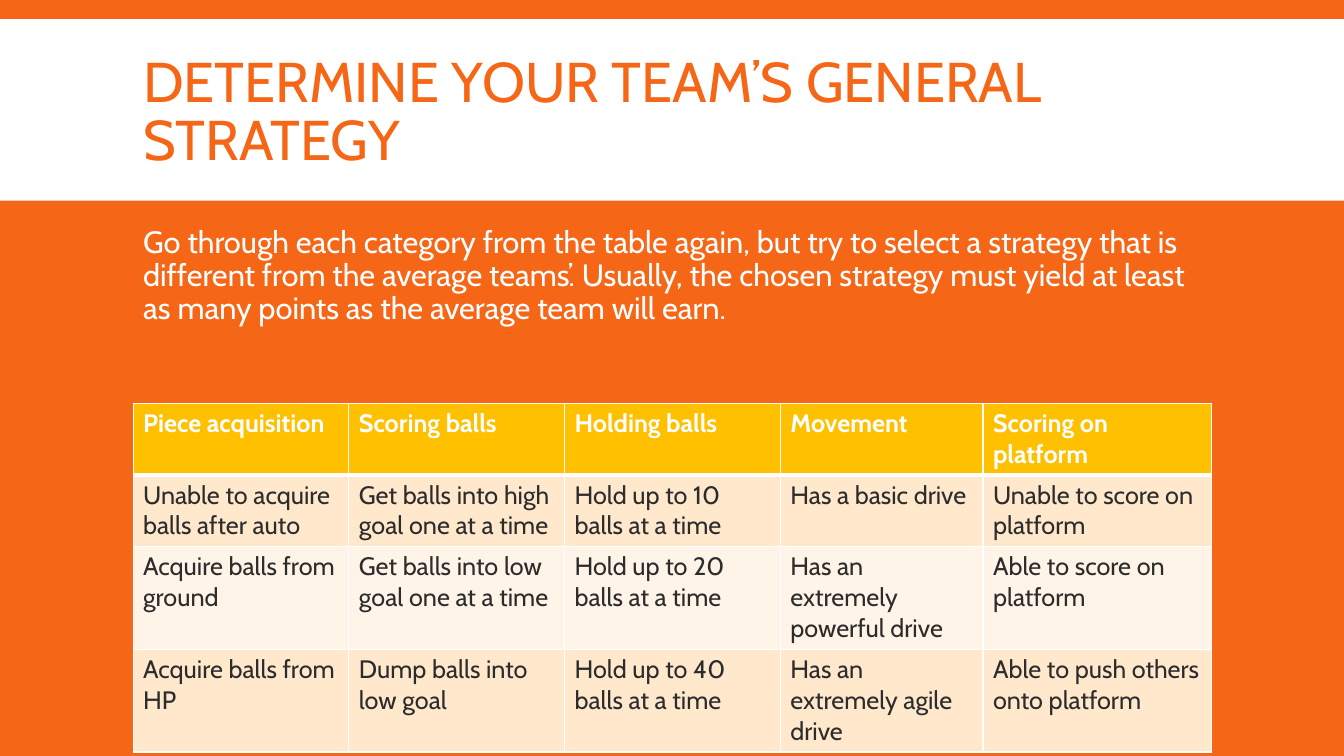
from pptx import Presentation
from pptx.dml.color import RGBColor
from pptx.enum.shapes import MSO_SHAPE
from pptx.enum.text import MSO_ANCHOR, MSO_AUTO_SIZE, PP_ALIGN
from pptx.util import Inches, Pt
from lxml.etree import SubElement
from pptx.oxml.ns import qn

# Content
TITLE = "DETERMINE YOUR TEAM’S GENERAL STRATEGY"
BODY = ("Go through each category from the table again, but try to select a "
        "strategy that is different from the average teams’. Usually, the chosen "
        "strategy must yield at least as many points as the average team will earn.")
ROWS = [
    ("Piece acquisition", "Scoring balls", "Holding balls", "Movement",
     "Scoring on platform"),
    ("Unable to acquire balls after auto", "Get balls into high goal one at a time",
     "Hold up to 10 balls at a time", "Has a basic drive",
     "Unable to score on platform"),
    ("Acquire balls from ground", "Get balls into low goal one at a time",
     "Hold up to 20 balls at a time", "Has an extremely powerful drive",
     "Able to score on platform"),
    ("Acquire balls from HP", "Dump balls into low goal",
     "Hold up to 40 balls at a time", "Has an extremely agile drive",
     "Able to push others onto platform"),
]
WIDTHS = [2.14, 2.14, 2.14, 2.01, 2.27]
HEIGHTS = [0.71, 0.71, 1.02, 1.02]

# Style
FONT = "Cabin"
ORANGE = RGBColor(0xF5, 0x66, 0x17)
WHITE = RGBColor(0xFF, 0xFF, 0xFF)
GOLD = RGBColor(0xFF, 0xC0, 0x00)
PEACH = RGBColor(0xFF, 0xE8, 0xCC)
CREAM = RGBColor(0xFF, 0xF4, 0xE7)
DARK = RGBColor(0x2C, 0x2C, 0x2C)
LEFT, WIDTH = 1.32, 10.7


def style(para, size, color, bold=False):
    for run in para.runs:
        font = run.font
        font.name, font.size, font.bold = FONT, Pt(size), bold
        font.color.rgb = color


def fill_box(box, text, top, height, size, color, anchor, spacing):
    box.left, box.top = Inches(LEFT), Inches(top)
    box.width, box.height = Inches(WIDTH), Inches(height)
    frame = box.text_frame
    frame.text = text
    frame.word_wrap = True
    frame.auto_size = MSO_AUTO_SIZE.NONE
    frame.vertical_anchor = anchor
    para = frame.paragraphs[0]
    para.alignment = PP_ALIGN.LEFT
    para.line_spacing = spacing
    style(para, size, color)
    return para


def add_border(cell, side, points):
    line = SubElement(cell._tc.get_or_add_tcPr(), qn("a:" + side), w=str(Pt(points)))
    solid = SubElement(line, qn("a:solidFill"))
    SubElement(solid, qn("a:srgbClr"), val=str(WHITE))


prs = Presentation()
prs.slide_width, prs.slide_height = Inches(13.33), Inches(7.5)
slide = prs.slides.add_slide(prs.slide_layouts[1])
slide.background.fill.solid()
slide.background.fill.fore_color.rgb = ORANGE
shapes = slide.shapes

# White band behind the title
band = shapes.add_shape(MSO_SHAPE.RECTANGLE, 0, Inches(0.19),
                        prs.slide_width, Inches(1.8))
band.shadow.inherit = False
band.fill.solid()
band.fill.fore_color.rgb = WHITE
band.line.fill.background()
shapes._spTree.insert(2, band._element)

# Title and body
fill_box(shapes.title, TITLE, 0.31, 1.65, 40, ORANGE, MSO_ANCHOR.MIDDLE, 0.85)
para = fill_box(slide.placeholders[1], BODY, 2.2, 4.6, 22, WHITE,
                MSO_ANCHOR.TOP, 0.9)
para.space_before, para.space_after = Pt(12), Pt(2)
props = para._p.get_or_add_pPr()
props.set("marL", "0")
props.set("indent", "0")
SubElement(props, qn("a:buNone"))

# Strategy table
table = shapes.add_table(len(ROWS), len(WIDTHS), Inches(LEFT), Inches(4),
                         Inches(WIDTH), Inches(sum(HEIGHTS))).table
for col, width in zip(table.columns, WIDTHS):
    col.width = Inches(width)
for r, (texts, height) in enumerate(zip(ROWS, HEIGHTS)):
    table.rows[r].height = Inches(height)
    head = r == 0
    shade = GOLD if head else PEACH if r % 2 else CREAM
    for c, text in enumerate(texts):
        cell = table.cell(r, c)
        cell.text = text
        style(cell.text_frame.paragraphs[0], 18, WHITE if head else DARK, head)
        for side in ("lnL", "lnR", "lnT", "lnB"):
            thick = (head and side == "lnB") or (r == 1 and side == "lnT")
            add_border(cell, side, 3 if thick else 1)
        cell.fill.solid()
        cell.fill.fore_color.rgb = shade

prs.save("out.pptx")
